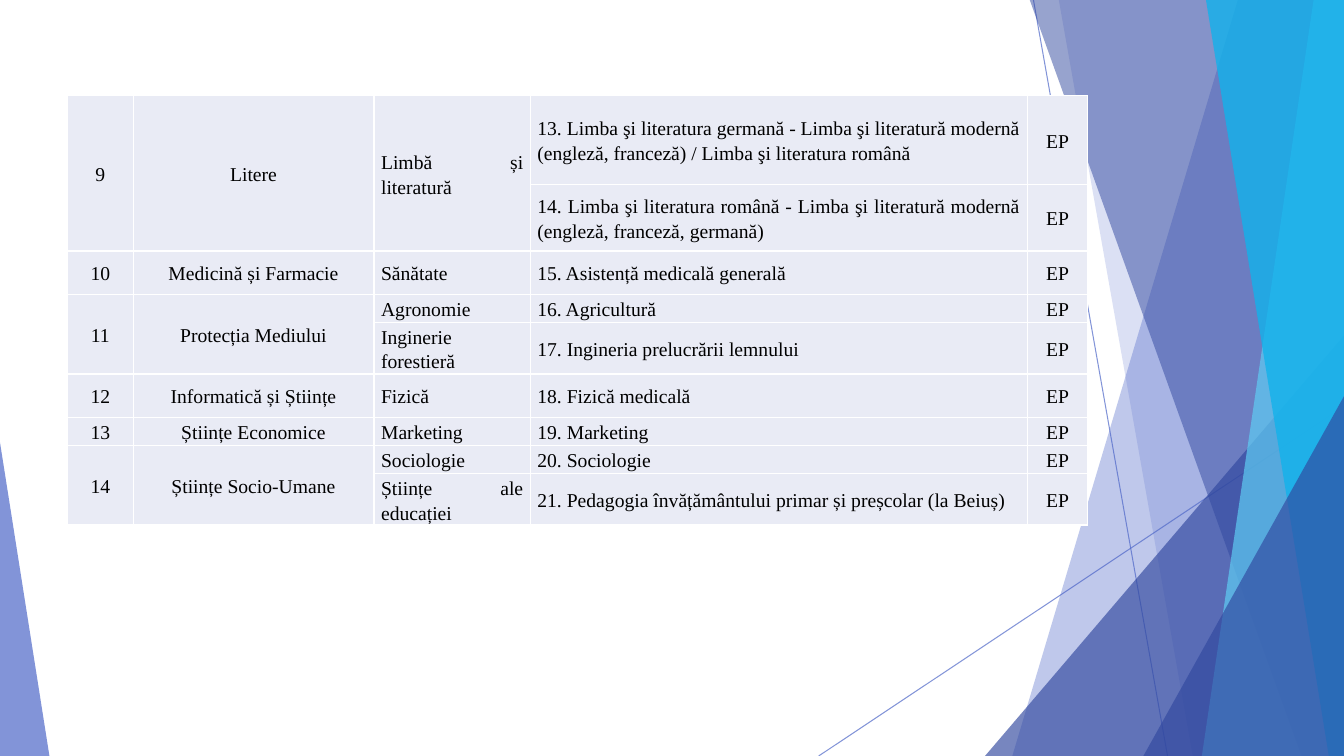
from lxml import etree
from pptx import Presentation
from pptx.dml.color import RGBColor
from pptx.enum.shapes import MSO_CONNECTOR, MSO_SHAPE
from pptx.enum.text import MSO_ANCHOR, PP_ALIGN
from pptx.oxml.ns import qn
from pptx.util import Inches, Pt

STRAIGHT = MSO_CONNECTOR.STRAIGHT
TRIANGLE = MSO_SHAPE.ISOSCELES_TRIANGLE
MIDDLE = MSO_ANCHOR.MIDDLE
CENTER, JUSTIFY = PP_ALIGN.CENTER, PP_ALIGN.JUSTIFY

WIDTH, HEIGHT = 13.33, 7.5
FONT = "Times New Roman"
BLUE, NAVY, SKY, CYAN = "4E67C8", "31489F", "5ECCF3", "12B2EB"
CELL_FILL, BORDER, TEXT = "E9EBF5", "FFFFFF", "000000"

COLUMNS = [0.65, 2.39, 1.55, 4.93, 0.6]
ROWS = [0.88, 0.66, 0.43, 0.28, 0.51, 0.43, 0.28, 0.28, 0.51]
ALIGNMENTS = [CENTER, CENTER, JUSTIFY, JUSTIFY, CENTER]

# Number, faculty, field, programme, form; None continues the cell above
PROGRAMMES = [
    ("9", "Litere", "Limbă și literatură",
     "13. Limba şi literatura germană - Limba şi literatură modernă "
     "(engleză, franceză) / Limba şi literatura română", "EP"),
    (None, None, None,
     "14. Limba şi literatura română - Limba şi literatură modernă "
     "(engleză, franceză, germană)", "EP"),
    ("10", "Medicină și Farmacie", "Sănătate",
     "15. Asistență medicală generală", "EP"),
    ("11", "Protecția Mediului", "Agronomie", "16. Agricultură", "EP"),
    (None, None, "Inginerie forestieră",
     "17. Ingineria prelucrării lemnului", "EP"),
    ("12", "Informatică și Științe", "Fizică", "18. Fizică medicală", "EP"),
    ("13", "Științe Economice", "Marketing", "19. Marketing", "EP"),
    ("14", "Științe Socio-Umane", "Sociologie", "20. Sociologie", "EP"),
    (None, None, "Științe ale educației",
     "21. Pedagogia învățământului primar și preșcolar (la Beiuș)", "EP"),
]


def rgb(value):
    return RGBColor.from_string(value)


def set_alpha(fill_parent, percent):
    color = fill_parent.find(f"{qn('a:solidFill')}/{qn('a:srgbClr')}")
    etree.SubElement(color, qn("a:alpha"), val=str(percent * 1000))


def paint(s, color, alpha):
    s.shadow.inherit = False
    s.fill.solid()
    s.fill.fore_color.rgb = rgb(color)
    set_alpha(s._element.spPr, alpha)
    s.line.fill.background()


def add_ray(slide, x1, y1, x2, y2):
    ray = slide.shapes.add_connector(
        STRAIGHT, Inches(x1), Inches(y1), Inches(x2), Inches(y2))
    ray.line.color.rgb = rgb(BLUE)
    ray.line.width = Pt(0.75)
    sp_pr = ray._element.spPr
    set_alpha(sp_pr.find(qn("a:ln")), 70)
    etree.SubElement(sp_pr, qn("a:effectLst"))


def add_panel(slide, top_x, bottom_x, color, alpha):
    """Full-height panel whose left edge slants from top_x to bottom_x."""
    builder = slide.shapes.build_freeform(Inches(top_x), Inches(-0.01))
    corners = [(WIDTH, -0.01), (WIDTH, HEIGHT), (bottom_x, HEIGHT)]
    builder.add_line_segments([(Inches(x), Inches(y)) for x, y in corners])
    paint(builder.convert_to_shape(), color, alpha)


def add_corner(slide, left, width, height, apex, color, alpha):
    """Triangle standing on the bottom edge of the slide."""
    s = slide.shapes.add_shape(TRIANGLE, Inches(left), Inches(HEIGHT - height),
                               Inches(width), Inches(height))
    s.adjustments[0] = apex
    paint(s, color, alpha)


def add_borders(cell):
    tc_pr = cell._tc.get_or_add_tcPr()
    for side in ("lnL", "lnR", "lnT", "lnB"):
        ln = etree.SubElement(tc_pr, qn(f"a:{side}"), w=str(Pt(1)))
        fill = etree.SubElement(ln, qn("a:solidFill"))
        etree.SubElement(fill, qn("a:srgbClr"), val=BORDER)


def style_cell(cell):
    add_borders(cell)
    cell.fill.solid()
    cell.fill.fore_color.rgb = rgb(CELL_FILL)
    cell.vertical_anchor = MIDDLE
    cell.margin_left = cell.margin_right = Inches(0.07)
    cell.margin_top = cell.margin_bottom = 0


def write_cell(cell, text, alignment):
    cell.text_frame.text = text
    p = cell.text_frame.paragraphs[0]
    p.alignment = alignment
    p.line_spacing = 1.15
    p.space_after = Pt(12)
    r = p.runs[0]
    r.font.name = FONT
    r.font.size = Pt(14)
    r.font.color.rgb = rgb(TEXT)


def add_programme_table(slide, left, top):
    table = slide.shapes.add_table(
        len(ROWS), len(COLUMNS), Inches(left), Inches(top),
        Inches(sum(COLUMNS)), Inches(sum(ROWS))).table
    table.first_row = table.horz_banding = False
    for column, width in zip(table.columns, COLUMNS):
        column.width = Inches(width)
    for row, height in zip(table.rows, ROWS):
        row.height = Inches(height)
    for i, record in enumerate(PROGRAMMES):
        for j, text in enumerate(record):
            cell = table.cell(i, j)
            style_cell(cell)
            if text is None:
                table.cell(i - 1, j).merge(cell)
            else:
                write_cell(cell, text, ALIGNMENTS[j])


def main():
    prs = Presentation()
    prs.slide_width, prs.slide_height = Inches(WIDTH), Inches(HEIGHT)
    slide = prs.slides.add_slide(prs.slide_layouts[6])

    # Faceted backdrop, from back to front
    add_ray(slide, 10.25, 0, 11.58, HEIGHT)
    add_ray(slide, WIDTH, 4.03, 8.12, HEIGHT)
    add_panel(slide, 12.28, 10.04, BLUE, 36)
    add_panel(slide, 10.5, 11.83, BLUE, 20)
    add_corner(slide, 9.77, 3.56, 4.17, 1, NAVY, 66)
    add_panel(slide, 10.21, 12.91, NAVY, 50)
    add_panel(slide, 13.03, 11.92, SKY, 70)
    add_panel(slide, 11.96, 13.18, CYAN, 80)
    add_corner(slide, 11.34, 1.99, 3.57, 1, NAVY, 66)
    add_corner(slide, 0, 0.49, 3.11, 0, BLUE, 70)

    # Study programmes
    add_programme_table(slide, 0.67, 0.95)

    prs.save("out.pptx")


if __name__ == "__main__":
    main()
